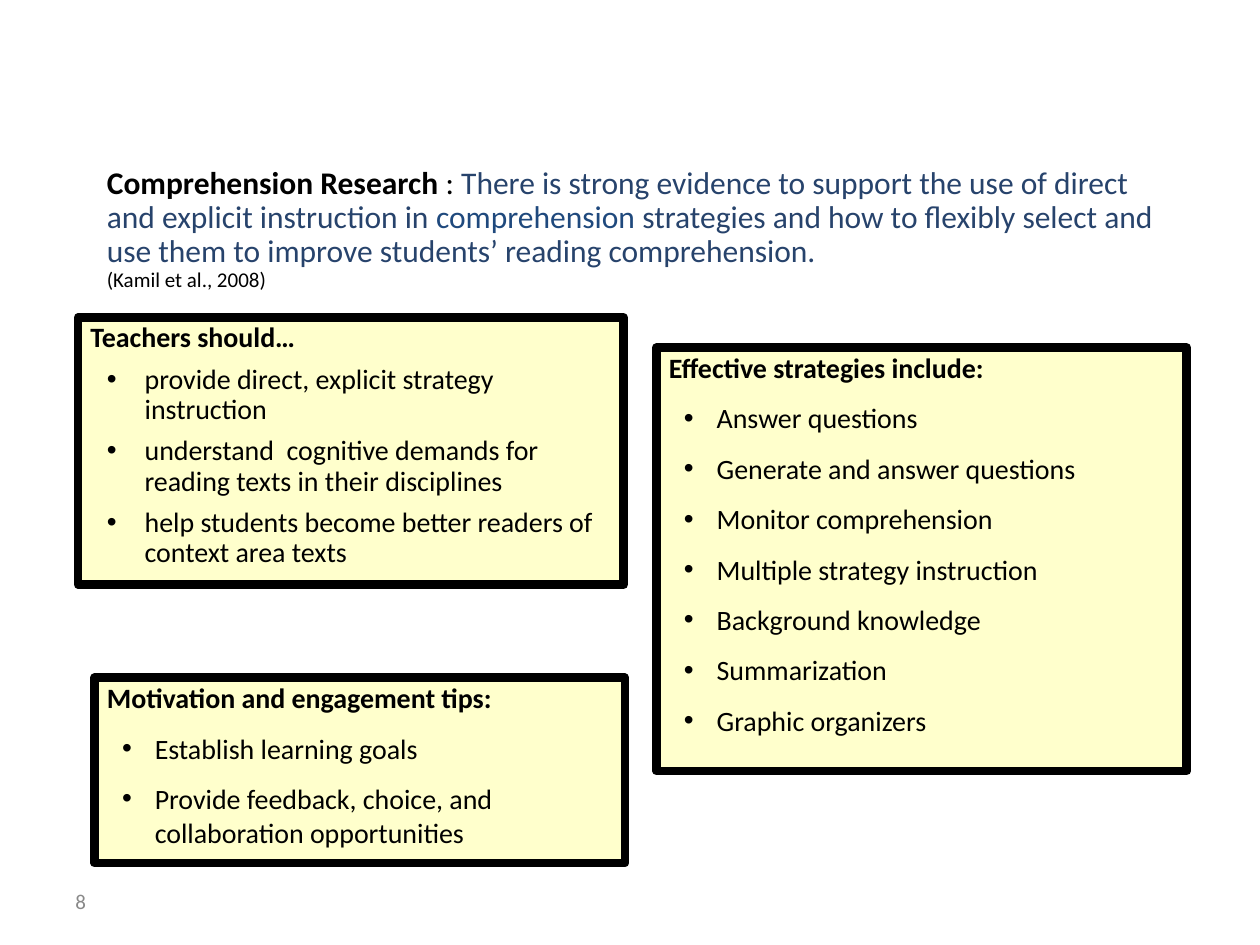
"""Build the comprehension research slide."""
from lxml.etree import SubElement
from pptx import Presentation
from pptx.dml.color import RGBColor
from pptx.enum.shapes import MSO_SHAPE
from pptx.enum.text import MSO_ANCHOR, MSO_AUTO_SIZE, PP_ALIGN
from pptx.oxml.ns import qn
from pptx.util import Inches, Pt

BLACK = RGBColor(0x00, 0x00, 0x00)
NAVY = RGBColor(0x27, 0x43, 0x6C)
BLUE = RGBColor(0x1F, 0x49, 0x7D)
GRAY = RGBColor(0x89, 0x89, 0x89)
CREAM = RGBColor(0xFF, 0xFF, 0xCC)
FONT = "Calibri"
BODY_SIZE = 16
TIGHT = 0.9

STATEMENT = [
    ("Comprehension Research ", BLACK, True),
    (": ", BLACK, False),
    ("There is strong evidence to support the use of direct and explicit instruction in ", NAVY, False),
    ("comprehension", BLUE, False),
    (" strategies and how to flexibly select and use them to improve students’ reading comprehension.", NAVY, False),
]
CITATION = "(Kamil et al., 2008)"
PAGE_NUMBER = "8"

PANELS = [
    {
        "heading": "Teachers should…",
        "box": (0.62, 2.52, 4.33, 2.12),
        "items": [
            "provide direct, explicit strategy instruction",
            "understand  cognitive demands for reading texts in their disciplines",
            "help students become better readers of context area texts",
        ],
        "indent": (0.43, 0.3), "line_spacing": TIGHT, "gap": 0.4,
    },
    {
        "heading": "Effective strategies include:",
        "box": (5.21, 2.76, 4.21, 3.36),
        "items": [
            "Answer questions",
            "Generate and answer questions",
            "Monitor comprehension",
            "Multiple strategy instruction",
            "Background knowledge",
            "Summarization",
            "Graphic organizers",
        ],
        "indent": (0.38, 0.26), "line_spacing": 1.0, "gap": 0.6,
    },
    {
        "heading": "Motivation and engagement tips:",
        "box": (0.75, 5.38, 4.21, 1.47),
        "items": [
            "Establish learning goals",
            "Provide feedback, choice, and collaboration opportunities",
        ],
        "indent": (0.38, 0.26), "line_spacing": 1.0, "gap": 0.6,
    },
]


def add_run(paragraph, text, size, color=BLACK, bold=False):
    run = paragraph.add_run()
    run.text = text
    run.font.name = FONT
    run.font.size = Pt(size)
    run.font.bold = bold
    run.font.color.rgb = color


def add_text_box(slide, box):
    frame = slide.shapes.add_textbox(*map(Inches, box)).text_frame
    frame.word_wrap = True
    return frame


def add_bullet(paragraph, margin, hanging):
    properties = paragraph._p.get_or_add_pPr()
    properties.set("marL", str(Inches(margin)))
    properties.set("indent", str(-Inches(hanging)))
    SubElement(properties, qn("a:buFont"), typeface="Arial")
    SubElement(properties, qn("a:buChar"), char="•")


def add_panel(slide, panel):
    shape = slide.shapes.add_shape(MSO_SHAPE.RECTANGLE, *map(Inches, panel["box"]))
    shape.shadow.inherit = False
    shape.fill.solid()
    shape.fill.fore_color.rgb = CREAM
    shape.line.color.rgb = BLACK
    shape.line.width = Pt(5)
    frame = shape.text_frame
    frame.word_wrap = True
    frame.auto_size = MSO_AUTO_SIZE.SHAPE_TO_FIT_TEXT
    frame.vertical_anchor = MSO_ANCHOR.TOP

    heading = frame.paragraphs[0]
    heading.alignment = PP_ALIGN.LEFT
    heading.line_spacing = TIGHT
    add_run(heading, panel["heading"], BODY_SIZE, bold=True)
    for item in panel["items"]:
        paragraph = frame.add_paragraph()
        paragraph.level = 1
        paragraph.alignment = PP_ALIGN.LEFT
        paragraph.line_spacing = panel["line_spacing"]
        paragraph.space_before = Pt(BODY_SIZE * panel["gap"])
        add_bullet(paragraph, *panel["indent"])
        add_run(paragraph, item, BODY_SIZE)


def main():
    presentation = Presentation()
    presentation.slide_width = Inches(10)
    presentation.slide_height = Inches(7.5)
    slide = presentation.slides.add_slide(presentation.slide_layouts[6])

    frame = add_text_box(slide, (0.75, 1.28, 8.67, 1.1))
    frame.auto_size = MSO_AUTO_SIZE.SHAPE_TO_FIT_TEXT
    statement = frame.paragraphs[0]
    statement.line_spacing = TIGHT
    for text, color, bold in STATEMENT:
        add_run(statement, text, 18, color, bold)
    statement.add_line_break()
    add_run(statement, CITATION, 12)

    for panel in PANELS:
        add_panel(slide, panel)

    frame = add_text_box(slide, (0.5, 6.95, 2.33, 0.4))
    frame.vertical_anchor = MSO_ANCHOR.MIDDLE
    add_run(frame.paragraphs[0], PAGE_NUMBER, 12, GRAY)

    presentation.save("out.pptx")


if __name__ == "__main__":
    main()
